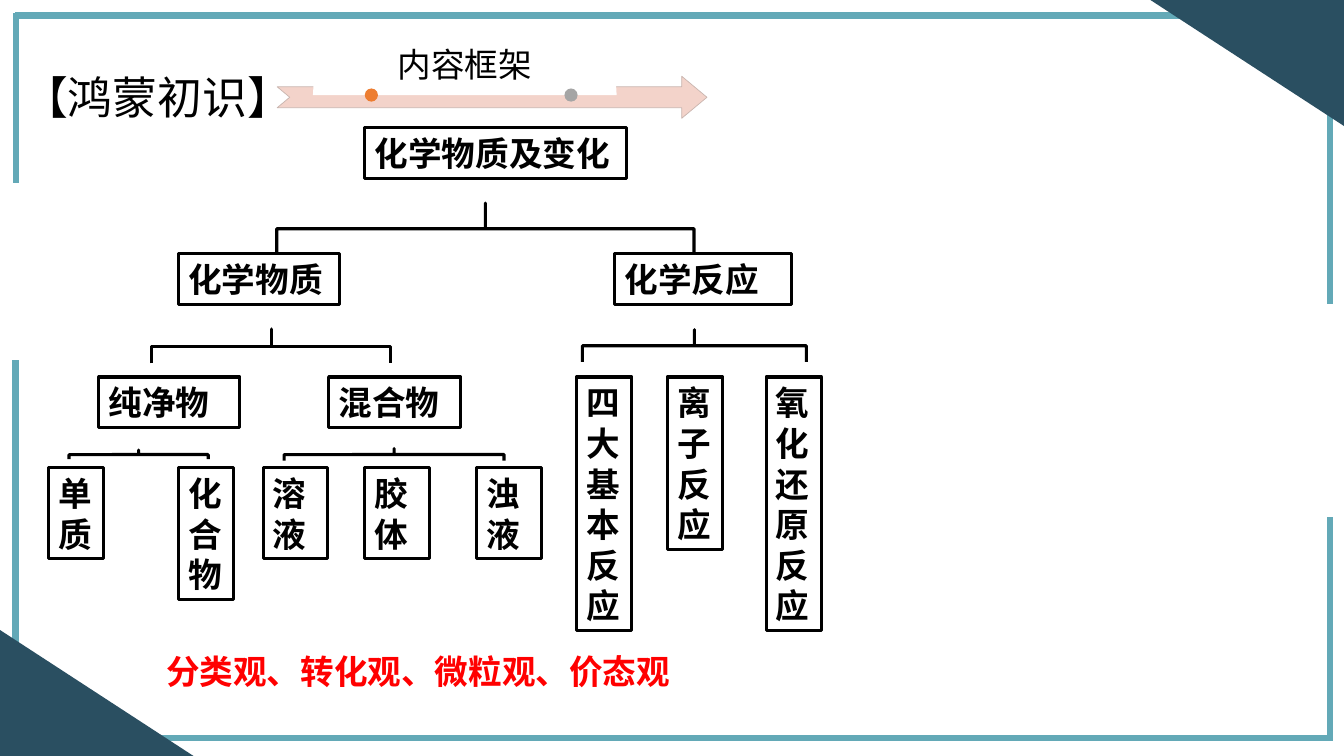
from lxml import etree
from pptx import Presentation
from pptx.dml.color import RGBColor
from pptx.enum.shapes import MSO_CONNECTOR, MSO_SHAPE
from pptx.enum.text import MSO_ANCHOR, PP_ALIGN
from pptx.oxml.ns import qn
from pptx.util import Pt


def color(hex_string):
    return RGBColor.from_string(hex_string)


def write(shape, text, size, ink="000000", bold=False):
    paragraph = shape.text_frame.paragraphs[0]
    paragraph.text = text
    paragraph.alignment = PP_ALIGN.LEFT
    font = paragraph.font
    font.name, font.size, font.bold = "Noto Sans CJK SC", Pt(size), bold
    font.color.rgb = color(ink)
    properties = paragraph._p.pPr.find(qn("a:defRPr"))
    etree.SubElement(properties, qn("a:ea"), typeface="Noto Sans CJK SC")
    run_font = paragraph.runs[0]._r.get_or_add_rPr()
    etree.SubElement(run_font, qn("a:ea"), typeface="Noto Sans CJK SC")
    return paragraph


deck = Presentation()
deck.slide_width, deck.slide_height = Pt(960), Pt(540)
slide = deck.slides.add_slide(deck.slide_layouts[6])
shapes = slide.shapes

border_lines = [
    (11, 11, 950, 11), (11.5, 9.5, 11.5, 131), (950, 9.5, 950, 217),
    (950, 527, 11, 527), (950, 529, 950, 369), (11, 529, 11, 257),
]
for x1, y1, x2, y2 in border_lines:
    border = shapes.add_connector(MSO_CONNECTOR.STRAIGHT, Pt(x1), Pt(y1), Pt(x2), Pt(y2))
    border.line.color.rgb = color("63A9B7")
    border.line.width = Pt(4.5)
    etree.SubElement(border._element.spPr, qn("a:effectLst"))

for left, top, turn in [(0, 450, 0), (821.75, 0, 180)]:
    corner = shapes.add_shape(MSO_SHAPE.RIGHT_TRIANGLE, Pt(left), Pt(top), Pt(138.25), Pt(90))
    corner.rotation = turn
    corner.shadow.inherit = False
    corner.fill.solid()
    corner.fill.fore_color.rgb = color("2A4F61")
    corner.line.fill.background()

heading = shapes.add_textbox(Pt(9.4), Pt(46), Pt(206.6), Pt(46))
heading.text_frame.word_wrap = False
write(heading, "【鸿蒙初识】", 32)

arrow = shapes.add_shape(MSO_SHAPE.NOTCHED_RIGHT_ARROW, Pt(198), Pt(54.5), Pt(307), Pt(30))
arrow.adjustments[1] = 0.6
arrow.shadow.inherit = False
arrow.fill.solid()
arrow.fill.fore_color.rgb = color("F3D3CA")
arrow.line.color.rgb = color("C9B5AF")
arrow.line.width = Pt(0.5)

outline = shapes.build_freeform(Pt(226), Pt(27))
outline.add_line_segments([(Pt(438), Pt(27)), (Pt(440.5), Pt(68)), (Pt(223.5), Pt(68))])
banner = outline.convert_to_shape()
banner.shadow.inherit = False
banner.fill.solid()
banner.fill.fore_color.rgb = color("FFFFFF")
banner.line.fill.background()
banner.text_frame.vertical_anchor = MSO_ANCHOR.MIDDLE
banner.text_frame.margin_top = banner.text_frame.margin_bottom = 0
banner_text = write(banner, "内容框架", 24)
banner_text.alignment = PP_ALIGN.CENTER
banner_text.line_spacing = 0.9

for left, tint in [(260.6, "ED7D31"), (403.2, "A5A5A5")]:
    dot = shapes.add_shape(MSO_SHAPE.OVAL, Pt(left), Pt(63.2), Pt(9.4), Pt(9.4))
    dot.shadow.inherit = False
    dot.fill.solid()
    dot.fill.fore_color.rgb = color(tint)
    dot.line.fill.background()

braces = [
    (346.7, 163.4, 298, 36.7), (193.7, 247.3, 170.6, 24.5), (496, 247, 160, 23),
    (99, 324.7, 99.4, 6.5), (281.5, 324.7, 157, 8.6),
]
for center_x, center_y, span, depth in braces:
    brace = shapes.add_shape(MSO_SHAPE.LEFT_BRACE, Pt(center_x - depth / 2),
                             Pt(center_y - span / 2), Pt(depth), Pt(span))
    brace.rotation = 90
    brace.adjustments[0] = 0
    brace.shadow.inherit = False
    brace.fill.background()
    brace.line.color.rgb = color("000000")
    brace.line.width = Pt(2.25)

concepts = [
    ("化学物质及变化", 260.6, 91.4, 187.2, 1),
    ("化学物质", 127.4, 181.4, 115.2, 1),
    ("化学反应", 439.2, 181.4, 126, 1),
    ("纯净物", 70.6, 269.3, 100.8, 1),
    ("混合物", 234.7, 269.3, 94.3, 1),
    ("单质", 34.6, 334.1, 39.6, 2),
    ("化合物", 127.4, 334.1, 39.6, 3),
    ("溶液", 187.9, 334.1, 46, 2),
    ("胶体", 260.6, 334.1, 46, 2),
    ("浊液", 340.6, 334.1, 46, 2),
    ("四大基本反应", 411.8, 269.3, 39.6, 6),
    ("离子反应", 476.6, 269.3, 39.6, 4),
    ("氧化还原反应", 547.2, 269.3, 39.6, 6),
]
for text, left, top, width, rows in concepts:
    concept = shapes.add_shape(MSO_SHAPE.RECTANGLE, Pt(left), Pt(top), Pt(width), Pt(7 + 29 * rows))
    concept.shadow.inherit = False
    concept.fill.background()
    concept.line.color.rgb = color("000000")
    concept.line.width = Pt(2.25)
    concept.text_frame.word_wrap = True
    concept.text_frame.vertical_anchor = MSO_ANCHOR.TOP
    write(concept, text, 24, bold=True).line_spacing = Pt(29)

viewpoints = shapes.add_textbox(Pt(111.6), Pt(461.5), Pt(404.6), Pt(36))
viewpoints.text_frame.word_wrap = True
write(viewpoints, "分类观、转化观、微粒观、价态观", 24, "FF0000", True).line_spacing = Pt(29)

deck.save("out.pptx")
